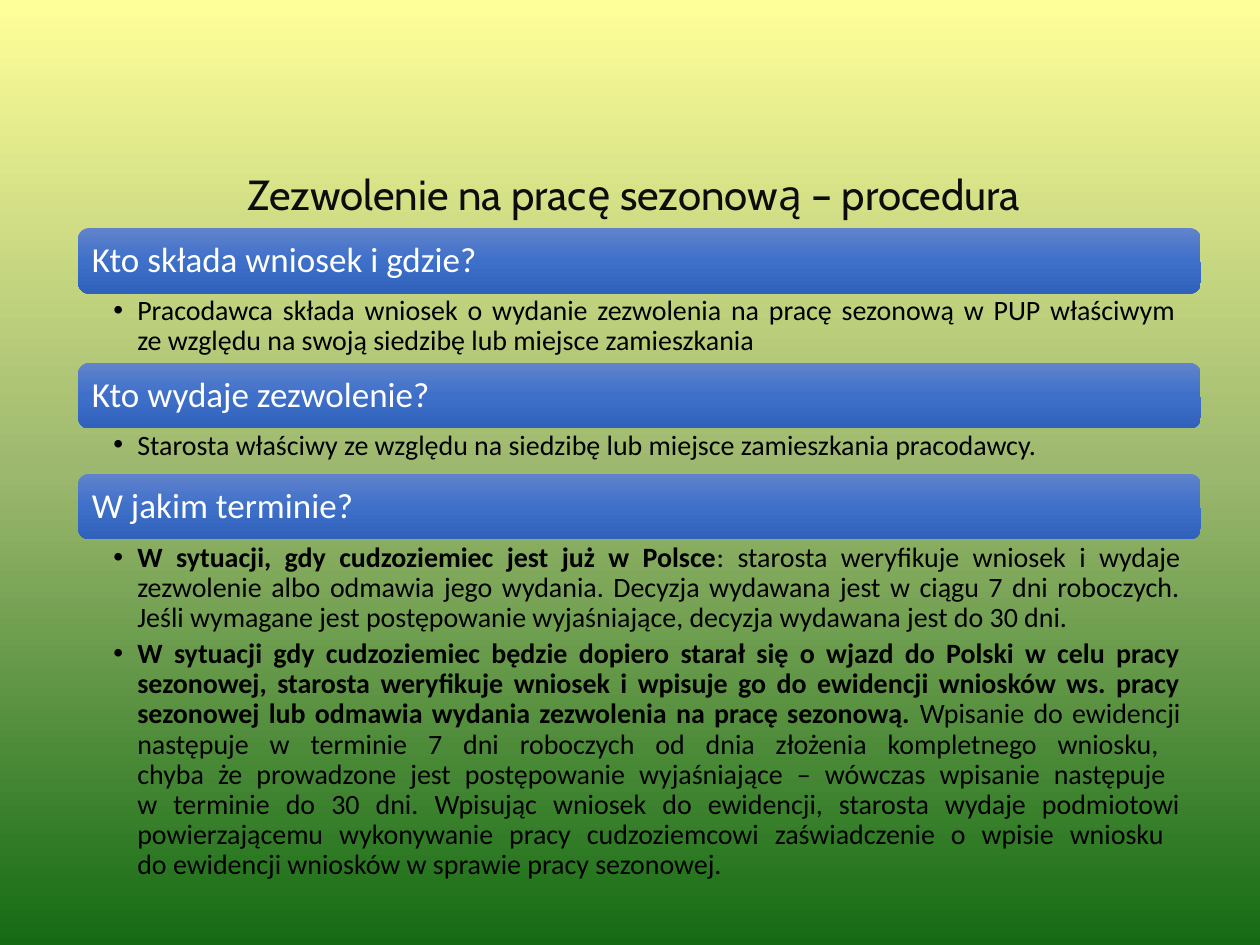
from copy import deepcopy

from lxml.etree import SubElement
from pptx import Presentation
from pptx.dml.color import RGBColor
from pptx.enum.shapes import MSO_SHAPE as Shape
from pptx.enum.text import MSO_ANCHOR as Anchor, PP_ALIGN as Align
from pptx.oxml.ns import qn
from pptx.util import Inches, Pt

BAR_H = 0.52
SECTIONS = [  # top, heading, body height, body insets (right, top), bullets
    (1.81, "Kto składa wniosek i gdzie?", 0.54, (0.12, 0.02), [
        [("Pracodawca składa wniosek o wydanie zezwolenia na pracę sezonową w PUP właściwym \n"
          "ze względu na swoją siedzibę lub miejsce zamieszkania", False)]]),
    (2.88, "Kto wydaje zezwolenie?", 0.36, (0.12, 0.02), [
        [("Starosta właściwy ze względu na siedzibę lub miejsce zamieszkania pracodawcy.", False)]]),
    (3.76, "W jakim terminie?", 2.81, (0.16, 0.03), [
        [("W sytuacji, gdy cudzoziemiec jest już w Polsce", True),
         (": starosta weryfikuje wniosek i wydaje zezwolenie albo odmawia jego wydania. "
          "Decyzja wydawana jest w ciągu 7 dni roboczych. Jeśli wymagane jest postępowanie "
          "wyjaśniające, decyzja wydawana jest do 30 dni.", False)],
        [("W sytuacji gdy cudzoziemiec będzie dopiero starał się o wjazd do Polski w celu pracy "
          "sezonowej, starosta weryfikuje wniosek i wpisuje go do ewidencji wniosków ws. pracy "
          "sezonowej lub odmawia wydania zezwolenia na pracę sezonową.", True),
         (" Wpisanie do ewidencji następuje w terminie 7 dni roboczych od dnia złożenia "
          "kompletnego wniosku, \nchyba że prowadzone jest postępowanie wyjaśniające – wówczas "
          "wpisanie następuje \nw terminie do 30 dni. Wpisując wniosek do ewidencji, starosta "
          "wydaje podmiotowi powierzającemu wykonywanie pracy cudzoziemcowi zaświadczenie o "
          "wpisie wniosku \ndo ewidencji wniosków w sprawie pracy sezonowej.", False)]]),
]


def rgb(value):
    return RGBColor.from_string(value)


def set_gradient(fill, owner, colors):
    """Three-stop vertical gradient, top to bottom."""
    fill.gradient()
    fill.gradient_angle = 270
    stops = owner.find(".//" + qn("a:gsLst"))
    stops.append(deepcopy(stops[-1]))
    for stop, position, color in zip(fill.gradient_stops, (0, 0.5, 1), colors):
        stop.position = position
        stop.color.rgb = rgb(color)


def add_text_frame(shapes, x, y, w, h, insets, anchor):
    tf = shapes.add_textbox(Inches(x), Inches(y), Inches(w), Inches(h)).text_frame
    tf.word_wrap = True
    tf.vertical_anchor = anchor
    tf.margin_left, tf.margin_top, tf.margin_right, tf.margin_bottom = map(Inches, insets)
    return tf


def fill_paragraph(p, runs, size, color, font="Calibri", align=Align.LEFT, after=0):
    p.alignment = align
    p.line_spacing = 0.9
    p.space_after = Pt(after)
    for text, bold in runs:
        for i, line in enumerate(text.split("\n")):
            if i:
                p.add_line_break()
            r = p.add_run()
            r.text = line
            r.font.name, r.font.size, r.font.bold = font, Pt(size), bold
            r.font.color.rgb = rgb(color)


def add_bullet(p):
    pPr = p._p.get_or_add_pPr()
    pPr.set("marL", str(Inches(0.19)))
    pPr.set("indent", str(-Inches(0.19)))
    SubElement(pPr, qn("a:buFont")).set("typeface", "Arial")
    SubElement(pPr, qn("a:buChar")).set("char", "•")


def add_title(slide, x, y, w, h):
    tf = add_text_frame(slide.shapes, x, y, w, h, (0.1, 0.05, 0.1, 0.05), Anchor.BOTTOM)
    fill_paragraph(tf.paragraphs[0], [("Zezwolenie na pracę sezonową – procedura", False)],
                   24, "0D0D0D", font="Cabin", align=Align.CENTER)


def add_section(shapes, x, y, w, heading, body_h, body_insets, bullets):
    # Heading bar
    bar = shapes.add_shape(Shape.ROUNDED_RECTANGLE,
                           Inches(x), Inches(y), Inches(w), Inches(BAR_H))
    bar.shadow.inherit = False
    bar.line.fill.background()
    set_gradient(bar.fill, bar._element, ("6183CB", "3E70CA", "3062BB"))
    tf = add_text_frame(shapes, x + 0.03, y + 0.03, w - 0.05, BAR_H - 0.05,
                        (0.08,) * 4, Anchor.MIDDLE)
    fill_paragraph(tf.paragraphs[0], [(heading, False)], 20, "FFFFFF", after=7)

    # Bulleted answer below the bar
    right, top = body_insets
    tf = add_text_frame(shapes, x, y + BAR_H, w, body_h, (0.28, top, right, top), Anchor.TOP)
    for i, runs in enumerate(bullets):
        p = tf.add_paragraph() if i else tf.paragraphs[0]
        fill_paragraph(p, runs, 16, "000000", align=Align.JUSTIFY, after=3.2)
        p.level = 1
        add_bullet(p)


def main():
    prs = Presentation()
    prs.slide_width, prs.slide_height = Inches(10), Inches(7.5)
    slide = prs.slides.add_slide(prs.slide_layouts[6])
    set_gradient(slide.background.fill, slide._element, ("FFFF99", "9CB86E", "156B13"))

    add_title(slide, 0.78, 0.62, 8.5, 1.17)
    group = slide.shapes.add_group_shape()
    for top, *section in SECTIONS:
        add_section(group.shapes, 0.62, top, 8.91, *section)
    prs.save("out.pptx")


if __name__ == "__main__":
    main()
